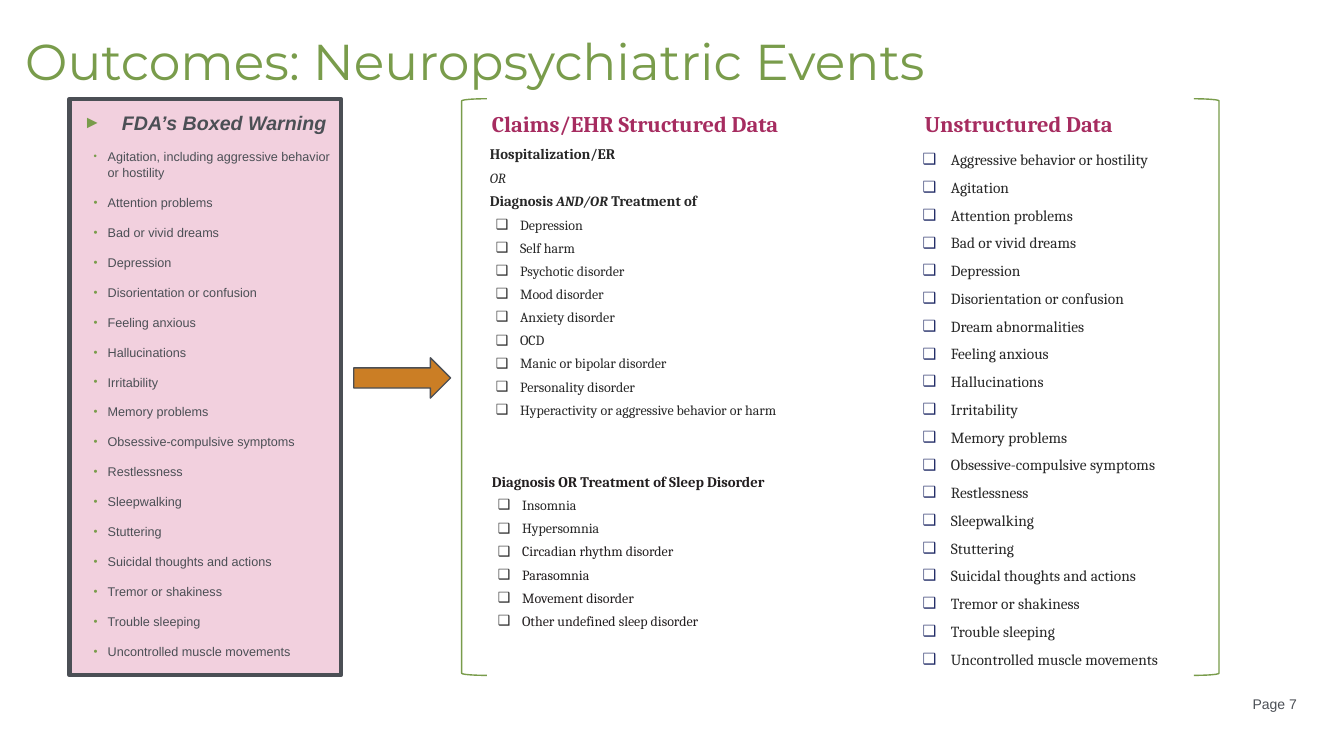
import dataclasses

import lxml.etree
import pptx
import pptx.dml.color
import pptx.enum.shapes
import pptx.enum.text
import pptx.oxml.ns
import pptx.util


@dataclasses.dataclass
class Theme:
    green: str = "799C4B"
    grey: str = "4B4F55"
    pink: str = "F2D0DE"
    orange: str = "CB7E25"
    plum: str = "A62C60"
    navy: str = "222C67"
    ink: str = "282828"
    black: str = "231F20"
    sans: str = "Arial"
    serif: str = "Cambria"
    display: str = "Montserrat"
    title_size: float = 36
    heading_size: float = 16
    warning_size: float = 14
    symptom_size: float = 11
    lead_size: float = 10.5
    text_size: float = 10
    small_size: float = 9


theme = Theme()
rgb = pptx.dml.color.RGBColor.from_string
Align = pptx.enum.text.PP_ALIGN
Anchor = pptx.enum.text.MSO_ANCHOR
Preset = pptx.enum.shapes.MSO_SHAPE

deck = pptx.Presentation()
deck.slide_width = pptx.util.Inches(13.33)
deck.slide_height = pptx.util.Inches(7.5)
page = deck.slides.add_slide(deck.slide_layouts[4])  # Comparison
column, row = deck.slide_width / 40, deck.slide_height / 30


def place(left, top, width, height):
    """Turn grid columns and rows into slide lengths."""
    return [round(left * column), round(top * row), round(width * column), round(height * row)]


def write(box, spans, size, color, font=theme.serif, bold=False, italic=False,
          align=Align.LEFT, spacing=1.0, before=0, after=0, level=0,
          bullet=None, bullet_color=theme.ink, bullet_size=100, indent=0, hang=0):
    """Add one paragraph; spans is a text or a list of (text, format) pairs."""
    frame = box.text_frame
    is_first = not frame.text
    para = frame.paragraphs[0] if is_first else frame.add_paragraph()
    para.alignment, para.level, para.line_spacing = align, level, spacing
    para.space_before = pptx.util.Pt(0 if is_first else before)
    para.space_after = pptx.util.Pt(after)
    props = para._p.get_or_add_pPr()
    props.set("marL", str(pptx.util.Inches(indent)))
    props.set("indent", str(pptx.util.Inches(-hang)))

    def add(parent, tag, **attributes):
        return lxml.etree.SubElement(parent, pptx.oxml.ns.qn(tag), attributes)

    if bullet:
        add(add(props, "a:buClr"), "a:srgbClr", val=bullet_color)
        add(props, "a:buSzPct", val=str(bullet_size * 1000))
        add(props, "a:buFont", typeface=theme.sans)
        add(props, "a:buChar", char=bullet)
    else:
        add(props, "a:buNone")
    for text, changes in [(spans, {})] if isinstance(spans, str) else spans:
        look = {"size": size, "bold": bold, "italic": italic, **changes}
        span = para.add_run()
        span.text = text
        span.font.name, span.font.color.rgb = font, rgb(color)
        span.font.size = pptx.util.Pt(look["size"])
        span.font.bold, span.font.italic = look["bold"], look["italic"]


# Wording
symptoms = [
    "Attention problems", "Bad or vivid dreams", "Depression", "Disorientation or confusion",
    "Feeling anxious", "Hallucinations", "Irritability", "Memory problems",
    "Obsessive-compulsive symptoms", "Restlessness", "Sleepwalking", "Stuttering",
    "Suicidal thoughts and actions", "Tremor or shakiness", "Trouble sleeping",
    "Uncontrolled muscle movements",
]
warning_items = ["Agitation, including aggressive behavior or hostility"] + symptoms
unstructured_items = sorted(
    symptoms + ["Aggressive behavior or hostility", "Agitation", "Dream abnormalities"])
diagnoses = [
    "Depression", "Self harm", "Psychotic disorder", "Mood disorder", "Anxiety disorder", "OCD",
    "Manic or bipolar disorder", "Personality disorder",
    "Hyperactivity or aggressive behavior or harm",
]
sleep_disorders = ["Insomnia", "Hypersomnia", "Circadian rhythm disorder", "Parasomnia",
                   "Movement disorder", "Other undefined sleep disorder"]

# Filled and outlined shapes
bracket_top, bracket_height = 3.92, 22.88
shapes = []
for preset, area, fill, line, weight in [
    (Preset.RECTANGLE, (2.07, bracket_top, 8.07, bracket_height), theme.pink, theme.grey, 3),
    (Preset.RIGHT_ARROW, (10.53, 14.2, 2.88, 1.6), theme.orange, theme.grey, 1),
    (Preset.LEFT_BRACKET, (13.74, bracket_top, 0.75, bracket_height), None, theme.green, 1),
    (Preset.RIGHT_BRACKET, (35.53, bracket_top, 0.75, bracket_height), None, theme.green, 1),
]:
    shape = page.shapes.add_shape(preset, *place(*area))
    shape.shadow.inherit = False
    if fill:
        shape.fill.solid()
        shape.fill.fore_color.rgb = rgb(fill)
    else:
        shape.fill.background()
    shape.line.color.rgb = rgb(line)
    shape.line.width = pptx.util.Pt(weight)
    shapes.append(shape)
warning = shapes[0]

# Text frames: placeholders and two text boxes
title, claims_heading, claims, unstructured_heading, unstructured = page.placeholders
sleep = page.shapes.add_textbox(*place(14.64, 18.76, 11.52, 6.6))
page_number = page.shapes.add_textbox(*place(26.32, 27.4, 12.57, 1.08))
for box, area, padded in [
    (title, (0.45, 1.32, 37.72, 2.16), True),
    (warning, (2.07, bracket_top, 8.07, bracket_height), True),
    (claims_heading, (14.64, 4.36, 10.26, 1.08), False),
    (claims, (14.28, 5.56, 11.52, 12.28), True),
    (unstructured_heading, (27.52, 4.36, 6.69, 1.08), False),
    (unstructured, (27.46, 5.6, 10.26, 19.64), False),
    (sleep, (14.64, 18.76, 11.52, 6.6), False),
    (page_number, (26.32, 27.4, 12.57, 1.08), True),
]:
    box.left, box.top, box.width, box.height = place(*area)
    frame = box.text_frame
    frame.word_wrap = True
    frame.auto_size = pptx.enum.text.MSO_AUTO_SIZE.NONE
    frame.vertical_anchor = Anchor.MIDDLE if box is title else Anchor.TOP
    frame.margin_left = frame.margin_right = pptx.util.Inches(0.1 if padded else 0)
    frame.margin_top = frame.margin_bottom = pptx.util.Inches(0.05 if padded else 0)

# Title and page number
write(title, "Outcomes: Neuropsychiatric Events", theme.title_size, theme.green,
      font=theme.display)
write(page_number, "Page 7", theme.text_size, theme.grey, font=theme.sans, align=Align.RIGHT)

# Boxed warning
write(warning, "FDA’s Boxed Warning", theme.warning_size, theme.grey, font=theme.sans,
      bold=True, italic=True, align=Align.CENTER, spacing=1.3, bullet="►",
      bullet_color=theme.green, bullet_size=90, indent=0.38, hang=0.38)
for item in warning_items:
    write(warning, item, theme.small_size, theme.grey, font=theme.sans, spacing=1.05, before=10,
          bullet="•", bullet_color=theme.green, bullet_size=75 if item == warning_items[0] else 90,
          indent=0.28, hang=0.14)

# Column headings
for box, heading in [(claims_heading, "Claims/EHR Structured Data"),
                     (unstructured_heading, "Unstructured Data")]:
    write(box, heading, theme.heading_size, theme.plum, bold=True)

# Structured data
small_italic = {"size": theme.text_size, "italic": True}
for lead in ["Hospitalization/ER",
             [("OR", {**small_italic, "bold": False})],
             [("Diagnosis ", {}), ("AND/OR", small_italic), (" Treatment of", {})]]:
    write(claims, lead, theme.lead_size, theme.ink, bold=True, after=4.5)
write(sleep, "Diagnosis OR Treatment of Sleep Disorder", theme.lead_size, theme.black,
      bold=True, after=4.5)
for box, items in [(claims, diagnoses), (sleep, sleep_disorders)]:
    for number, item in enumerate(items):
        color = theme.black if box is sleep and number > 1 else theme.ink
        write(box, item, theme.text_size, color, after=4.5, level=1,
              bullet="❑", indent=0.3, hang=0.24)

# Unstructured data
for item in unstructured_items:
    write(unstructured, item, theme.symptom_size, theme.ink, spacing=1.5,
          bullet="❑", bullet_color=theme.navy, indent=0.28, hang=0.28)

deck.save("out.pptx")
